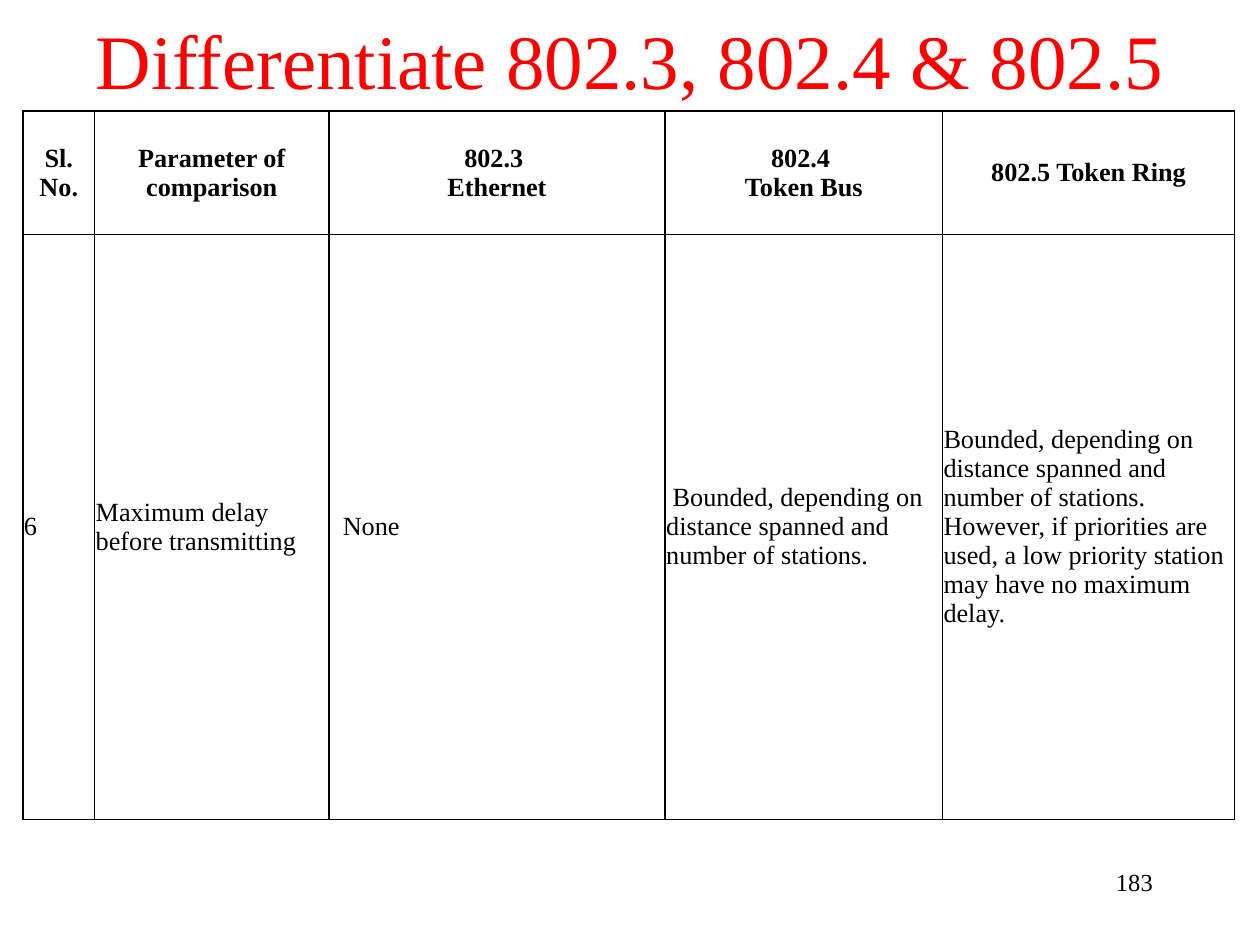
from lxml import etree
from pptx import Presentation
from pptx import util as u
from pptx.dml.color import RGBColor
from pptx.enum import text
from pptx.oxml.ns import qn

COLOURS = {"title": "FF0000", "ink": "000000", "paper": "FFFFFF"}
FONT = "Times New Roman"
COLUMN_WIDTHS = [1.45, 4.72, 6.78, 5.59, 5.89]
ROW_HEIGHTS = [2.49, 11.79]
HEADINGS = ["Sl. No.", "Parameter of comparison", "802.3 \nEthernet",
            "802.4 \nToken Bus", "802.5 Token Ring"]
DELAYS = [
    "6",
    "Maximum delay before transmitting",
    "None",
    " Bounded, depending on distance spanned and number of stations.",
    "Bounded, depending on distance spanned and number of stations. "
    "However, if priorities are used, a low priority station may have "
    "no maximum delay.",
]


def write(frame, content, size=15, colour="ink", bold=False,
          align=text.PP_ALIGN.LEFT, anchor=text.MSO_ANCHOR.MIDDLE):
    """Fill a text frame, one paragraph for each line of content."""
    frame.word_wrap = True
    frame.vertical_anchor = anchor
    for index, line in enumerate(content.split("\n")):
        para = frame.add_paragraph() if index else frame.paragraphs[0]
        para.alignment = align
        span = para.add_run()
        span.text = line
        span.font.name = FONT
        span.font.size = u.Pt(size)
        span.font.bold = bold
        span.font.color.rgb = RGBColor.from_string(COLOURS[colour])


def add_borders(cell, width=1):
    properties = cell._tc.get_or_add_tcPr()
    for index, side in enumerate(("lnL", "lnR", "lnT", "lnB")):
        line = etree.Element(qn(f"a:{side}"), w=str(u.Pt(width)))
        fill = etree.SubElement(line, qn("a:solidFill"))
        etree.SubElement(fill, qn("a:srgbClr"), val=COLOURS["ink"])
        properties.insert(index, line)


class Page:
    def __init__(self, deck):
        title_only = deck.slide_layouts[5]
        self.slide = deck.slides.add_slide(title_only)

    def title(self, content, left, top, width, height):
        box = self.slide.shapes.title
        box.left, box.top = u.Cm(left), u.Cm(top)
        box.width, box.height = u.Cm(width), u.Cm(height)
        write(box.text_frame, content, size=44, colour="title",
              align=text.PP_ALIGN.CENTER)

    def table(self, rows, left, top):
        table = self.slide.shapes.add_table(
            len(rows), len(COLUMN_WIDTHS), u.Cm(left), u.Cm(top),
            u.Cm(sum(COLUMN_WIDTHS)), u.Cm(sum(ROW_HEIGHTS))).table
        table.first_row = table.horz_banding = False
        for column, width in zip(table.columns, COLUMN_WIDTHS):
            column.width = u.Cm(width)
        for row, height in zip(table.rows, ROW_HEIGHTS):
            row.height = u.Cm(height)
        for row_index, row in enumerate(rows):
            for column_index, content in enumerate(row):
                self.cell(table.cell(row_index, column_index), content,
                          heading=row_index == 0)
        return table

    def cell(self, cell, content, heading):
        cell.margin_left = cell.margin_right = u.Cm(0.02)
        cell.margin_top = cell.margin_bottom = 0
        cell.vertical_anchor = text.MSO_ANCHOR.MIDDLE
        cell.fill.solid()
        cell.fill.fore_color.rgb = RGBColor.from_string(COLOURS["paper"])
        add_borders(cell)
        align = text.PP_ALIGN.CENTER if heading else text.PP_ALIGN.LEFT
        write(cell.text_frame, content, bold=heading, align=align,
              anchor=None)

    def label(self, content, left, top, width, height, **style):
        box = self.slide.shapes.add_textbox(
            u.Cm(left), u.Cm(top), u.Cm(width), u.Cm(height))
        write(box.text_frame, content, **style)


def main():
    deck = Presentation()
    deck.slide_width, deck.slide_height = u.Cm(25.4), u.Cm(19.05)
    page = Page(deck)
    page.title("Differentiate 802.3, 802.4 & 802.5", 0, 0.2, 25.4, 1.96)
    table = page.table([HEADINGS, DELAYS], 0.46, 2.24)
    none_para = table.cell(1, 2).text_frame.paragraphs[0]
    none_para._p.get_or_add_pPr().set("marL", str(u.Cm(0.26)))
    table.cell(1, 4).text_frame.paragraphs[0].space_after = u.Pt(10)
    page.label("183", 18.21, 17.35, 5.28, 1.27, size=14,
               align=text.PP_ALIGN.RIGHT, anchor=text.MSO_ANCHOR.TOP)
    deck.save("out.pptx")


if __name__ == "__main__":
    main()
